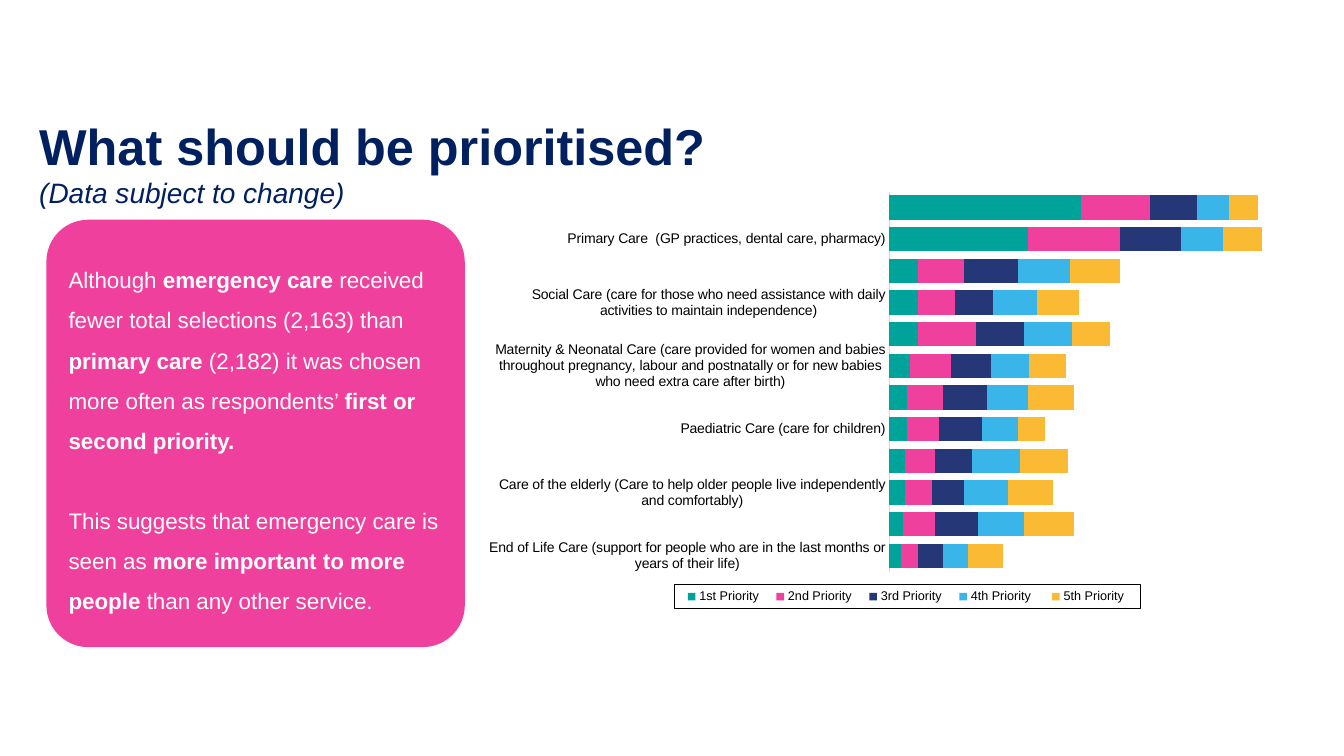
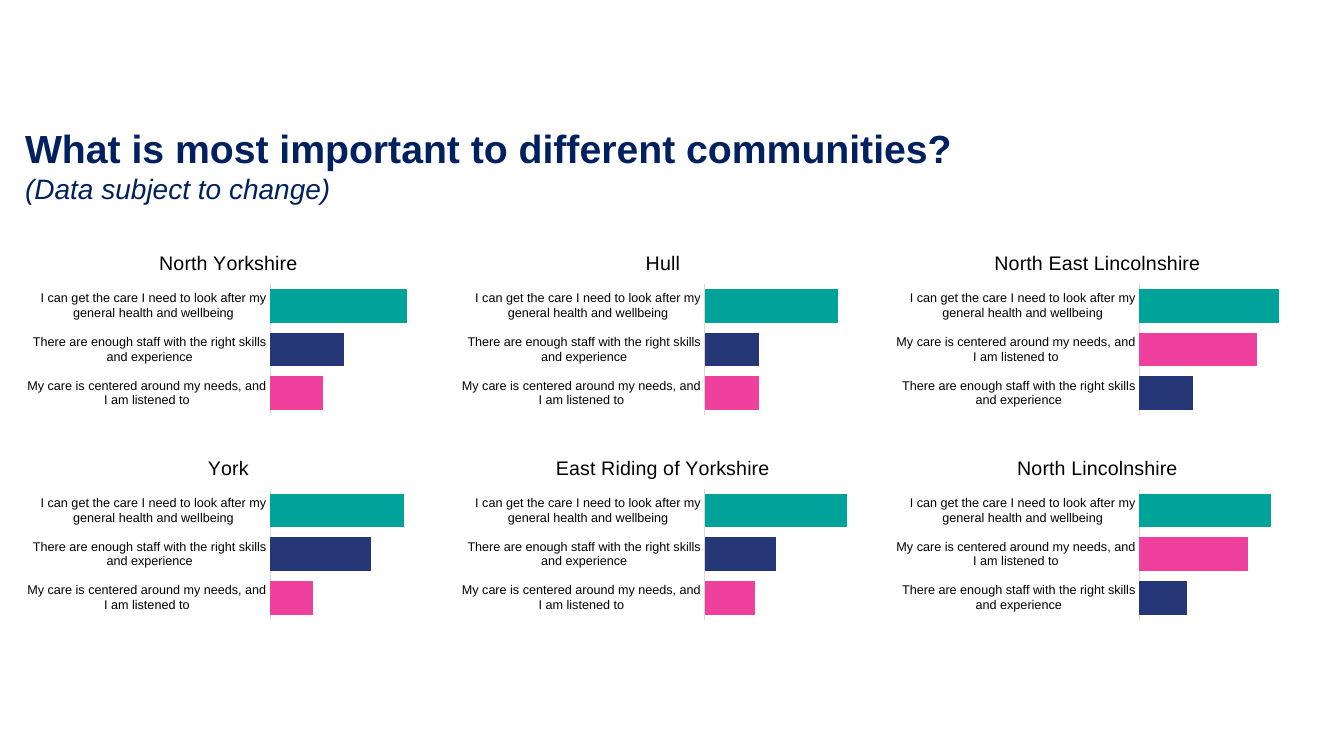
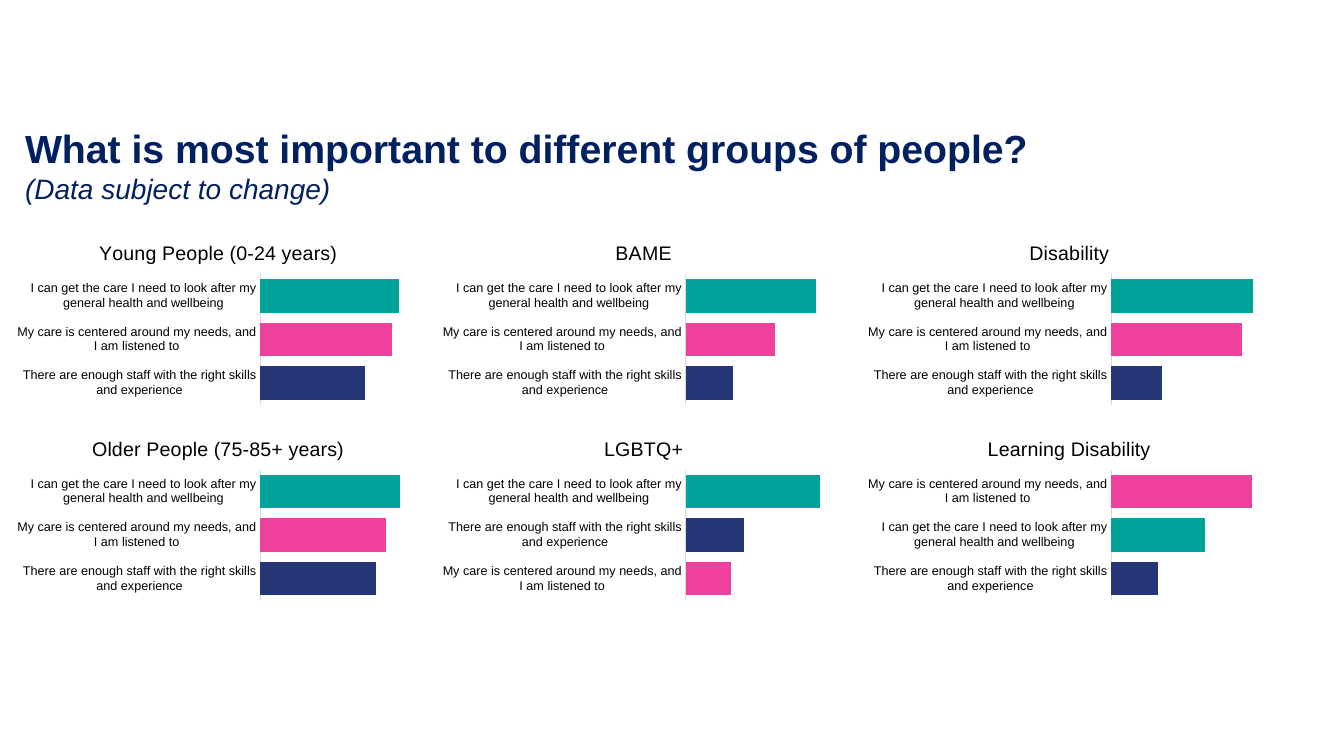
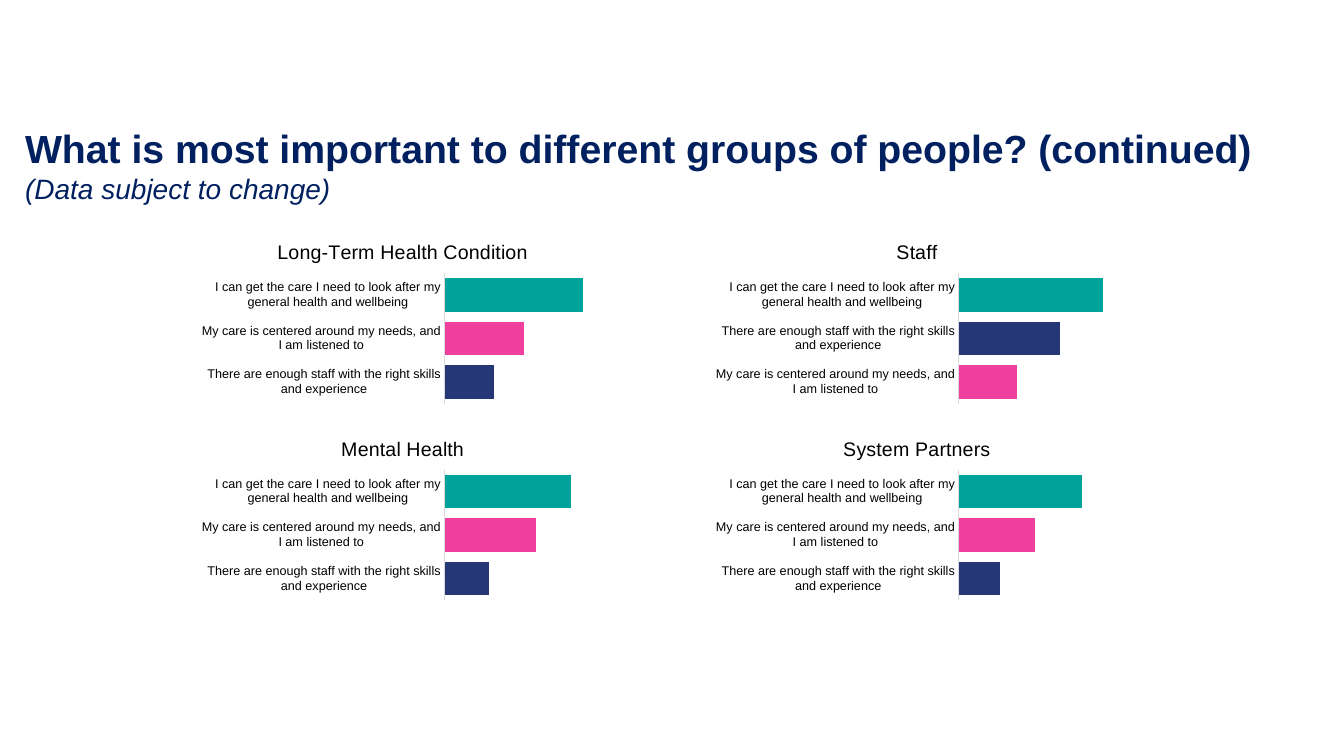
from lxml import etree
from pptx import Presentation
from pptx.chart.data import CategoryChartData
from pptx.dml.color import RGBColor
from pptx.enum.chart import XL_CHART_TYPE as ChartType, XL_LEGEND_POSITION as LegendPos
from pptx.enum.chart import XL_TICK_MARK as Tick
from pptx.enum.shapes import MSO_SHAPE as Shape
from pptx.enum.text import MSO_ANCHOR as Anchor, PP_ALIGN as Align
from pptx.oxml import parse_xml
from pptx.oxml.ns import nsdecls, qn
from pptx.util import Inches, Pt

FONT = "Arial"
NAVY = RGBColor(0x00, 0x20, 0x60)
TEAL = RGBColor(0x00, 0xA3, 0x99)
PINK = RGBColor(0xF0, 0x40, 0x9D)
INDIGO = RGBColor(0x25, 0x37, 0x76)
SKY = RGBColor(0x3A, 0xB5, 0xE9)
AMBER = RGBColor(0xFB, 0xBA, 0x33)
GREY = RGBColor(0xD9, 0xD9, 0xD9)
BLACK = RGBColor(0, 0, 0)
WHITE = RGBColor(0xFF, 0xFF, 0xFF)

CARE = ("I can get the care I need to look after my general health and wellbeing", TEAL)
NEEDS = ("My care is centered around my needs, and I am listened to", PINK)
STAFF = ("There are enough staff with the right skills and experience", INDIGO)
NEEDS_LAST = (NEEDS, STAFF, CARE)
STAFF_LAST = (STAFF, NEEDS, CARE)
NEEDS_FIRST = (STAFF, CARE, NEEDS)

SERVICES = [
    "End of Life Care (support for people who are in the last months or years of their life)",
    "Care for long-term health conditions (providing care and support for people to manage "
    "long-term conditions e.g diabetes)",
    "Care of the elderly (Care to help older people live independently and comfortably)",
    "Community Care (care provided outside of a hospital setting e.g. district nursing, "
    "physiotherapy and speech and language therapy)",
    "Paediatric Care (care for children)",
    "Planned Care & Diagnostics (when a patient visits a hospital or clinic at a pre-arranged "
    "time/date for diagnosis or treatment)",
    "Maternity & Neonatal Care (care provided for women and babies throughout pregnancy, labour "
    "and postnatally or for new babies who need extra care after birth)",
    "Critical Conditions Care (care for people with an incurable condition that may shorten "
    "their life e.g. Cancer care / Heart care)",
    "Social Care (care for those who need assistance with daily activities to maintain "
    "independence)",
    "Mental Health Care (care to improve or maintain a person's mental health)",
    "Primary Care  (GP practices, dental care, pharmacy)",
    "Emergency Care (Immediate treatment of life-threatening injuries or illnesses)",
]
PRIORITIES = [
    ("1st Priority", TEAL, (6, 7, 8, 8, 9, 9, 11, 15, 15, 15, 72, 100)),
    ("2nd Priority", PINK, (9, 17, 14, 16, 17, 19, 21, 30, 19, 24, 48, 36)),
    ("3rd Priority", INDIGO, (13, 22, 17, 19, 22, 23, 21, 25, 20, 28, 32, 24)),
    ("4th Priority ", SKY, (13, 24, 23, 25, 19, 21, 20, 25, 23, 27, 22, 17)),
    ("5th Priority ", AMBER, (18, 26, 23, 25, 14, 24, 19, 20, 22, 26, 20, 15)),
]
FINDINGS = [
    [("Although ", False), ("emergency care ", True),
     ("received fewer total selections (2,163) than ", False), ("primary care ", True),
     ("(2,182) it was chosen more often as respondents’ ", False),
     ("first or second priority.", True)],
    [("This suggests that emergency care is seen as ", False),
     ("more important to more people ", True), ("than any other service.", False)],
]

COMMUNITIES = [
    [("North Yorkshire", NEEDS_LAST, (92, 94, 100), (87, 101.6)),
     ("Hull", NEEDS_LAST, (92, 92, 100), (86.5, 102)),
     ("North East Lincolnshire", STAFF_LAST, (84, 96, 100), (74, 102.6))],
    [("York", NEEDS_LAST, (89, 96, 100), (83.8, 102.3)),
     ("East Riding of Yorkshire", NEEDS_LAST, (91, 93, 100), (86, 101.1)),
     ("North Lincolnshire", STAFF_LAST, (89, 97, 100), (82.7, 102.8))],
]
GROUPS = [
    [("Young People (0-24 years)", STAFF_LAST, (75, 95, 100), (0, 110)),
     ("BAME", STAFF_LAST, (92, 96, 100), (87.4, 102.2)),
     ("Disability", STAFF_LAST, (92, 99, 100), (87.5, 101))],
    [("Older People (75-85+ years)", STAFF_LAST, (83, 90, 100), (0, 109.3)),
     ("LGBTQ+", NEEDS_LAST, (86, 88, 100), (78.8, 103)),
     ("Learning Disability", NEEDS_FIRST, (92, 96, 100), (88, 101))],
]
MORE_GROUPS = [
    [("Long-Term Health Condition", STAFF_LAST, (91, 94, 100), (86, 101.5)),
     ("Staff", NEEDS_LAST, (94, 97, 100), (90, 100.6))],
    [("Mental Health", STAFF_LAST, (86, 94, 100), (78.4, 104.6)),
     ("System Partners", STAFF_LAST, (93, 96, 100), (89.5, 102.6))],
]


def add_run(paragraph, text, size, color, bold=False, italic=False):
    """Append one formatted run to a paragraph."""
    run = paragraph.add_run()
    run.text = text
    font = run.font
    font.name, font.size, font.bold, font.italic = FONT, Pt(size), bold, italic
    font.color.rgb = color


def add_heading(slide, box, text, size, margin_bottom=None):
    """Write the heading and its data caveat, centred vertically if a bottom margin is given."""
    frame = slide.shapes.add_textbox(*map(Inches, box)).text_frame
    frame.word_wrap = True
    if margin_bottom is not None:
        frame.vertical_anchor = Anchor.MIDDLE
        frame.margin_bottom = Inches(margin_bottom)
    add_run(frame.paragraphs[0], text, size, NAVY, bold=True)
    add_run(frame.add_paragraph(), "(Data subject to change)", 20, NAVY, italic=True)


def add_findings(slide, box):
    """Draw the rounded pink panel with the findings."""
    panel = slide.shapes.add_shape(Shape.ROUNDED_RECTANGLE, *map(Inches, box))
    panel.adjustments[0] = 0.1
    panel.shadow.inherit = False
    panel.fill.solid()
    panel.fill.fore_color.rgb = PINK
    panel.line.fill.background()
    frame = panel.text_frame
    frame.word_wrap = True
    frame.vertical_anchor = Anchor.MIDDLE
    for index, finding in enumerate(FINDINGS):
        paragraph = frame.add_paragraph() if index else frame.paragraphs[0]
        paragraph.alignment = Align.LEFT
        paragraph.line_spacing = 1.5
        if index:
            paragraph.space_before = Pt(28)
        for text, bold in finding:
            add_run(paragraph, text, 16, WHITE, bold)


def set_layout(element, index, x, y, w, h, inner=False):
    """Give a plot area or legend a fixed place, as fractions of the chart."""
    for old in element.findall(qn("c:layout")):
        element.remove(old)
    layout = etree.Element(qn("c:layout"))
    manual = etree.SubElement(layout, qn("c:manualLayout"))
    settings = [("layoutTarget", "inner")] if inner else []
    settings += [("xMode", "edge"), ("yMode", "edge"), ("x", x), ("y", y), ("w", w), ("h", h)]
    for tag, value in settings:
        etree.SubElement(manual, qn(f"c:{tag}")).set("val", str(value))
    element.insert(index, layout)


def add_bars(slide, box, kind, categories, series, label_size, scale, plot_box):
    """Add a horizontal bar chart with a hidden value axis and return it."""
    data = CategoryChartData()
    data.categories = categories
    for name, values in series:
        data.add_series(name, values)
    chart = slide.shapes.add_chart(kind, *map(Inches, box), data).chart
    chart.font.name, chart.font.size = FONT, Pt(10)
    chart.font.color.rgb = BLACK
    chart.has_legend = chart.has_title = False
    plot = chart.plots[0]
    plot.gap_width = 30
    plot.vary_by_categories = False
    value_axis = chart.value_axis
    value_axis.visible = value_axis.has_major_gridlines = False
    value_axis.minimum_scale, value_axis.maximum_scale = scale
    category_axis = chart.category_axis
    category_axis.major_tick_mark = category_axis.minor_tick_mark = Tick.NONE
    labels = category_axis.tick_labels.font
    labels.name, labels.size = FONT, Pt(label_size)
    labels.color.rgb = BLACK
    category_axis.format.line.color.rgb = GREY
    category_axis.format.line.width = Pt(0.75)
    set_layout(chart.plots[0]._element.getparent(), 0, *plot_box, inner=True)
    return chart


def paint(part, color):
    """Fill a series or a point with a solid colour."""
    part.format.fill.solid()
    part.format.fill.fore_color.rgb = color


def add_priorities(slide, box):
    """Add the stacked chart of priorities with its framed legend."""
    chart = add_bars(slide, box, ChartType.BAR_STACKED, SERVICES,
                     [(name, values) for name, _, values in PRIORITIES],
                     10, (0, 222), (0.488, 0.051, 0.512, 0.792))
    chart.plots[0].overlap = 100
    for series, (_, color, _) in zip(chart.plots[0].series, PRIORITIES):
        paint(series, color)
    chart.has_legend = True
    legend = chart.legend
    legend.position = LegendPos.BOTTOM
    legend.include_in_layout = False
    legend.font.name, legend.font.size = FONT, Pt(9)
    legend.font.color.rgb = BLACK
    element = legend._element
    set_layout(element, 1, 0.23, 0.87, 0.56, 0.05)
    frame = parse_xml(
        f'<c:spPr {nsdecls("c", "a")}><a:ln w="9525"><a:solidFill>'
        f'<a:srgbClr val="{BLACK}"/></a:solidFill></a:ln></c:spPr>')
    element.find(qn("c:overlay")).addnext(frame)


def add_needs(slide, box, title, needs, values, scale):
    """Add the chart of one group's three most important needs."""
    chart = add_bars(slide, box, ChartType.BAR_CLUSTERED, [text for text, _ in needs],
                     [("Series 1", values)], 9, scale, (0.603, 0.256, 0.377, 0.726))
    chart.has_title = True
    add_run(chart.chart_title.text_frame.paragraphs[0], title, 14, BLACK)
    chart.chart_title.include_in_layout = False
    for index, (_, color) in enumerate(needs):
        paint(chart.plots[0].series[0].points[index], color)


def build_priorities(slide):
    """Build the slide on priorities."""
    add_heading(slide, (0.29, 1.09, 12.02, 1.65), "What should be prioritised?", 36)
    add_findings(slide, (0.46, 2.18, 4.15, 4.24))
    add_priorities(slide, (4.79, 1.66, 8.26, 4.76))


def build_needs(slide, heading, rows, left, top, column_step, row_step):
    """Build a slide with a grid of need charts."""
    add_heading(slide, (0.15, 1.3, 12.86, 1.1), heading, 28, margin_bottom=0.48)
    for row, groups in enumerate(rows):
        for column, group in enumerate(groups):
            box = (left + column * column_step, top + row * row_step, 4.03, 1.79)
            add_needs(slide, box, *group)


def main():
    """Build and save the presentation."""
    deck = Presentation()
    deck.slide_width, deck.slide_height = Inches(13.33), Inches(7.5)
    blank = deck.slide_layouts[6]
    build_priorities(deck.slides.add_slide(blank))
    question = "What is most important to different"
    for heading, rows, *grid in (
        (f"{question} communities?", COMMUNITIES, 0.25, 2.36, 4.31, 2.03),
        (f"{question} groups of people?", GROUPS, 0.15, 2.26, 4.22, 1.94),
        (f"{question} groups of people? (continued)", MORE_GROUPS, 1.98, 2.25, 5.1, 1.95),
    ):
        build_needs(deck.slides.add_slide(blank), heading, rows, *grid)
    deck.save("out.pptx")


if __name__ == "__main__":
    main()
